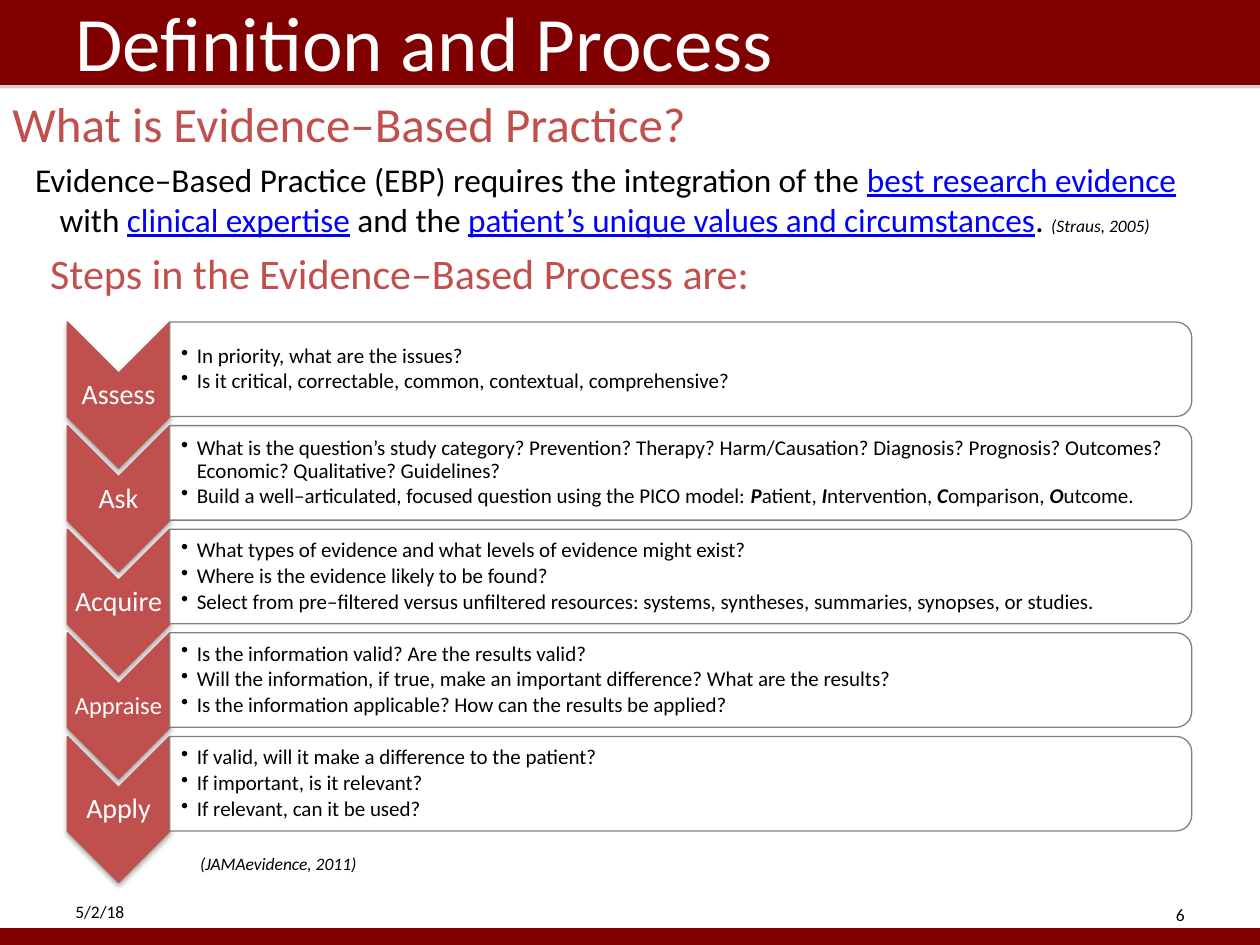
from dataclasses import dataclass
from typing import NamedTuple

from lxml.etree import SubElement
from pptx import Presentation
from pptx.dml.color import RGBColor
from pptx.enum.shapes import MSO_SHAPE as Preset
from pptx.enum.text import MSO_ANCHOR as Anchor, MSO_AUTO_SIZE as AutoSize, PP_ALIGN as Align
from pptx.oxml.ns import qn
from pptx.util import Pt

COLORS = {
    "maroon": "800000", "red": "C0504D", "white": "FFFFFF", "black": "000000",
    "gray": "808080", "link": "0000FF",
}
FONT = "Calibri"
SLIDE_WIDTH, SLIDE_HEIGHT = 720, 540

FIRST_ROW_TOP, ROW_PITCH = 184, 59.2
CHEVRON_LEFT, CHEVRON_WIDTH, CHEVRON_HEIGHT = 38.5, 58.5, 83.5
PANEL_LEFT, PANEL_WIDTH, PANEL_HEIGHT = 97, 584, 54


class Run(NamedTuple):
    text: str
    color: str = "black"
    size: float | None = None
    bold: bool = False
    italic: bool = False
    underline: bool = False


@dataclass
class Step:
    name: str
    bullets: list[str | list[Run]]
    size: float = 16


def initial(letter: str) -> Run:
    return Run(letter, bold=True, italic=True)


def link(text: str) -> Run:
    return Run(text, "link", underline=True)


STEPS = [
    Step("Assess", [
        "In priority, what are the issues?",
        "Is it critical, correctable, common, contextual, comprehensive?",
    ]),
    Step("Ask", [
        "What is the question’s study category? Prevention? Therapy? Harm/Causation? "
        "Diagnosis? Prognosis? Outcomes? Economic? Qualitative? Guidelines?",
        [Run("Build a well–articulated, focused question using the PICO model: "),
         initial("P"), Run("atient, "), initial("I"), Run("ntervention, "),
         initial("C"), Run("omparison, "), initial("O"), Run("utcome.")],
    ]),
    Step("Acquire", [
        "What types of evidence and what levels of evidence might exist?",
        "Where is the evidence likely to be found?",
        "Select from pre–filtered versus unfiltered resources: systems, syntheses, "
        "summaries, synopses, or studies.",
    ]),
    Step("Appraise", [
        "Is the information valid? Are the results valid?",
        "Will the information, if true, make an important difference? What are the results?",
        "Is the information applicable? How can the results be applied?",
    ], size=14),
    Step("Apply", [
        "If valid, will it make a difference to the patient?",
        "If important, is it relevant?",
        "If relevant, can it be used?",
    ]),
]

DEFINITION = [
    Run("Evidence–Based Practice (EBP) requires the integration of the "),
    link("best research evidence "), Run("with "), link("clinical expertise"),
    Run(" and the "), link("patient’s unique values and circumstances"), Run(". "),
    Run("(Straus, 2005)", size=10, italic=True),
]


def rgb(name: str) -> RGBColor:
    return RGBColor.from_string(COLORS[name])


def write(paragraph, text: str | list[Run], *, size: float, color: str = "black",
          italic: bool = False, align=Align.LEFT, line_spacing: float = 1,
          before: float = 0, after: float = 0, indent: tuple[float, float] = (0, 0),
          bullet: str = "") -> None:
    """Fill a paragraph; indent is the left margin and the first-line offset."""
    properties = paragraph._p.get_or_add_pPr()
    properties.set("marL", str(Pt(indent[0])))
    properties.set("indent", str(Pt(indent[1])))
    paragraph.alignment = align
    paragraph.line_spacing = line_spacing
    paragraph.space_before, paragraph.space_after = Pt(before), Pt(after)
    if bullet:
        SubElement(properties, qn("a:buChar")).set("char", bullet)
    runs = [Run(text, color, italic=italic)] if isinstance(text, str) else text
    for item in runs:
        run = paragraph.add_run()
        run.text = item.text
        font = run.font
        font.name, font.size = FONT, Pt(item.size or size)
        font.color.rgb = rgb(item.color)
        font.bold, font.italic, font.underline = item.bold, item.italic, item.underline


def set_frame(shape, *, anchor=Anchor.TOP, insets=(7.2, 3.6, 7.2, 3.6), wrap: bool = True):
    frame = shape.text_frame
    frame.word_wrap, frame.auto_size, frame.vertical_anchor = wrap, AutoSize.NONE, anchor
    (frame.margin_left, frame.margin_top,
     frame.margin_right, frame.margin_bottom) = map(Pt, insets)
    return frame


def add_text(slide, left, top, width, height, **frame_format):
    box = slide.shapes.add_textbox(Pt(left), Pt(top), Pt(width), Pt(height))
    return set_frame(box, **frame_format)


def add_box(slide, preset, left, top, width, height, *, fill: str, line: str | None = None):
    shape = slide.shapes.add_shape(preset, Pt(left), Pt(top), Pt(width), Pt(height))
    shape.fill.solid()
    shape.fill.fore_color.rgb = rgb(fill)
    if line:
        shape.line.color.rgb = rgb(line)
        shape.line.width = Pt(0.75)
    else:
        shape.line.fill.background()
    shape.shadow.inherit = False
    return shape


def add_quarter_turned(slide, preset, left, top, width, height, **colors):
    """Add a shape turned by 90 degrees that covers the given area."""
    shift = (width - height) / 2
    shape = add_box(slide, preset, left + shift, top - shift, height, width, **colors)
    shape.rotation = 90
    return shape


def cast_shadow(shape, color: str, blur: float) -> None:
    effects = shape._element.spPr.find(qn("a:effectLst"))
    shadow = SubElement(effects, qn("a:outerShdw"), blurRad=str(Pt(blur)),
                        dist=str(Pt(1.8)), dir="5400000", rotWithShape="0")
    tint = SubElement(shadow, qn("a:srgbClr"), val=COLORS[color])
    SubElement(tint, qn("a:alpha"), val="35000")


def add_bar(slide, top: float, height: float) -> None:
    bar = add_box(slide, Preset.RECTANGLE, 0, top, SLIDE_WIDTH, height,
                  fill="maroon", line="maroon")
    cast_shadow(bar, "gray", 0)


def add_title(slide, text: str) -> None:
    title = slide.shapes.title
    title.left, title.top, title.width, title.height = Pt(36), Pt(3), Pt(420), Pt(40)
    frame = set_frame(title, anchor=Anchor.MIDDLE)
    write(frame.paragraphs[0], text, size=44, color="white")
    title._element.getparent().append(title._element)  # in front of the bars


def add_step(slide, step: Step, top: float) -> None:
    chevron = add_quarter_turned(slide, Preset.CHEVRON, CHEVRON_LEFT, top, CHEVRON_WIDTH,
                                 CHEVRON_HEIGHT, fill="red", line="red")
    cast_shadow(chevron, "black", 3.1)
    label = add_text(slide, CHEVRON_LEFT, top + 29.5, CHEVRON_WIDTH, 25,
                     anchor=Anchor.MIDDLE, insets=(0.7,) * 4)
    write(label.paragraphs[0], step.name, size=step.size, color="white",
          align=Align.CENTER, line_spacing=0.9)

    add_quarter_turned(slide, Preset.ROUND_2_SAME_RECTANGLE, PANEL_LEFT, top, PANEL_WIDTH,
                       PANEL_HEIGHT, fill="white", line="gray")
    details = add_text(slide, PANEL_LEFT, top + 2.6, PANEL_WIDTH - 2, PANEL_HEIGHT - 5.2,
                       anchor=Anchor.MIDDLE, insets=(6.5, 0.7, 0.7, 0.7))
    for index, bullet in enumerate(step.bullets):
        paragraph = details.add_paragraph() if index else details.paragraphs[0]
        write(paragraph, bullet, size=12, line_spacing=0.9, after=1.8,
              indent=(9, -9), bullet="•")


def main() -> None:
    presentation = Presentation()
    presentation.slide_width, presentation.slide_height = Pt(SLIDE_WIDTH), Pt(SLIDE_HEIGHT)
    slide = presentation.slides.add_slide(presentation.slide_layouts[5])

    add_bar(slide, 0, 48.4)
    add_bar(slide, 530.6, 9.4)
    add_title(slide, "Definition and Process")

    body = add_text(slide, 0, 50, 714, 90)
    write(body.paragraphs[0], "What is Evidence–Based Practice?", size=28, color="red")
    write(body.add_paragraph(), DEFINITION, size=19, before=3.8, after=6, indent=(27, -14))

    for index, step in enumerate(STEPS):
        add_step(slide, step, FIRST_ROW_TOP + index * ROW_PITCH)

    heading = add_box(slide, Preset.RECTANGLE, 21.6, 140.4, 440.6, 31, fill="white")
    write(set_frame(heading, anchor=Anchor.MIDDLE).paragraphs[0],
          "Steps in the Evidence–Based Process are:", size=24, color="red")

    citation = add_text(slide, 107.3, 483.8, 106, 19.4, wrap=False)
    write(citation.paragraphs[0], "(JAMAevidence, 2011)", size=10, italic=True)
    date = add_text(slide, 36, 511.2, 168, 28.8)
    write(date.paragraphs[0], "5/2/18", size=10)
    number = add_text(slide, 516, 513, 168, 28.8)
    write(number.paragraphs[0], "6", size=10, align=Align.RIGHT)

    presentation.save("out.pptx")


if __name__ == "__main__":
    main()
